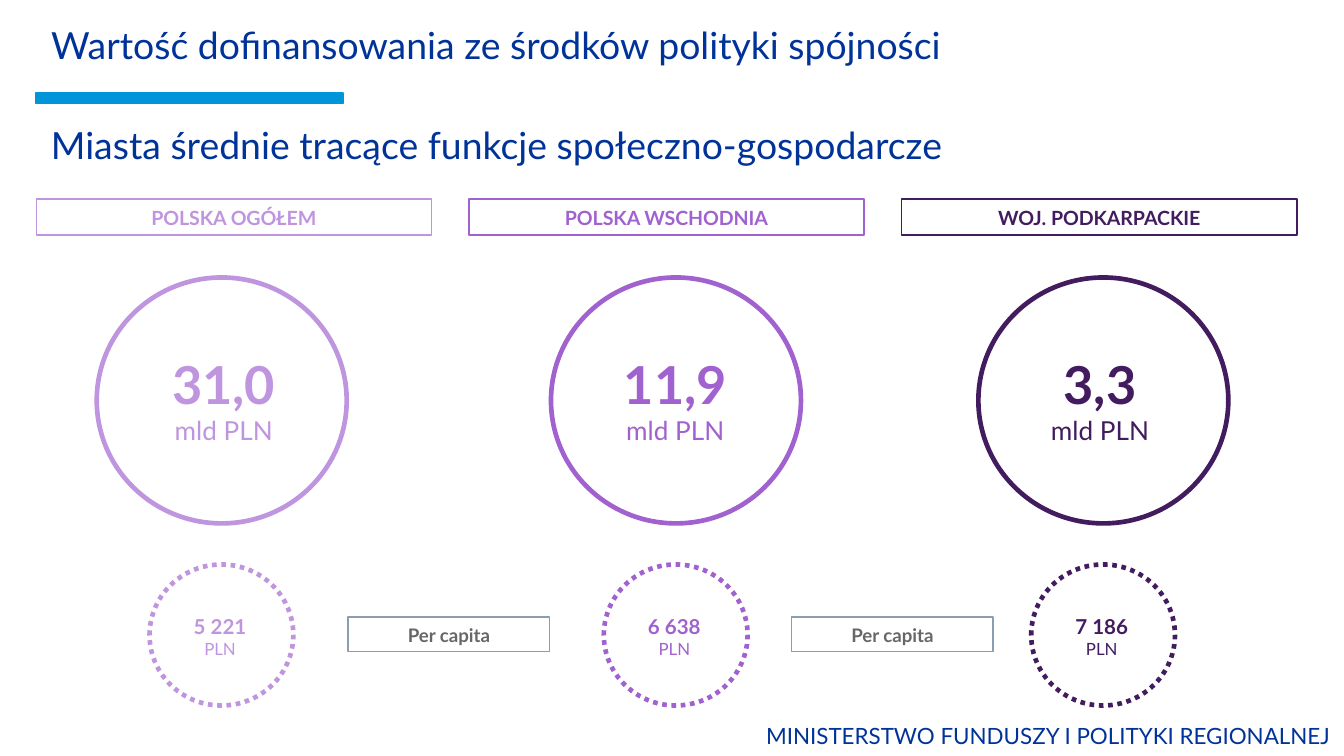
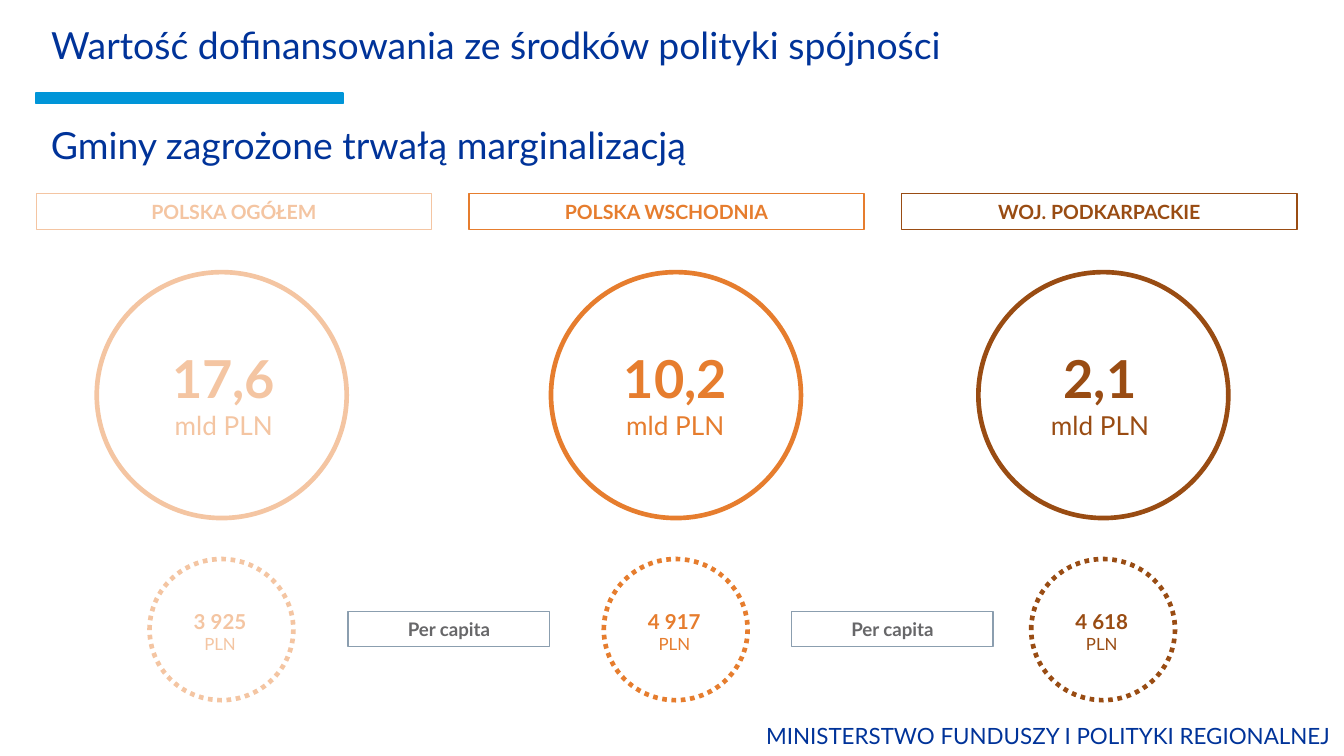
from dataclasses import dataclass

from pptx import Presentation
from pptx.dml.color import RGBColor
from pptx.enum.dml import MSO_LINE_DASH_STYLE as Dash
from pptx.enum.shapes import MSO_SHAPE as Shape
from pptx.enum.text import MSO_ANCHOR as Anchor, MSO_AUTO_SIZE as Fit, PP_ALIGN as Align
from pptx.util import Inches, Pt

CELL = Inches(0.1)
FONT = "Lato"
NAVY, BLUE, SLATE, GRAY = "003399", "0095D8", "8B9EAF", "676769"
TITLE = "Wartość dofinansowania ze środków polityki spójności"
MINISTRY = "MINISTERSTWO FUNDUSZY I POLITYKI REGIONALNEJ"
REGIONS = ["POLSKA OGÓŁEM", "POLSKA WSCHODNIA", "WOJ. PODKARPACKIE"]
COLUMN_STEP = 32.2
CIRCLE_OFFSETS = [4.5, 6.1, 5.7]
AMOUNT_OFFSETS = [2.9, 2.7, 2.5]
PER_CAPITA_LEFTS = [23.2, 56.2]

TOPICS = [
    {
        "subtitle": "Miasta średnie tracące funkcje społeczno-gospodarcze",
        "top": 14.8,
        "colors": ["BF95DF", "A162D0", "421C5E"],
        "amounts": ["31,0", "11,9", "3,3"],
        "per_capita": ["5 221", "6 638", "7 186"],
    },
    {
        "subtitle": "Gminy zagrożone trwałą marginalizacją",
        "top": 14.4,
        "colors": ["F4C5A2", "E67D2E", "994C13"],
        "amounts": ["17,6", "10,2", "2,1"],
        "per_capita": ["3 925", "4 917", "4 618"],
    },
]


@dataclass
class Box:
    """A rectangle measured in grid cells."""

    left: float
    top: float
    width: float
    height: float

    def inside(self, left, top, width, height):
        """Return a box placed relative to this one."""
        return Box(self.left + left, self.top + top, width, height)

    def lengths(self):
        """Return left, top, width and height as slide lengths."""
        return [round(n * CELL) for n in (self.left, self.top, self.width, self.height)]


def color(value):
    """Turn a hex string into a colour."""
    return RGBColor.from_string(value)


def write(shape, *lines, ink=NAVY, align=Align.LEFT, anchor=Anchor.TOP, fit=Fit.SHAPE_TO_FIT_TEXT):
    """Fill a shape with lines given as (text, size, bold)."""
    frame = shape.text_frame
    frame.word_wrap = True
    frame.auto_size = fit
    frame.vertical_anchor = anchor
    for index, (text, size, bold) in enumerate(lines):
        para = frame.paragraphs[0] if index == 0 else frame.add_paragraph()
        para.alignment = align
        span = para.add_run()
        span.text = text
        span.font.name = FONT
        span.font.size = Pt(size)
        span.font.bold = bold
        span.font.color.rgb = color(ink)


def add_outline(parent, kind, box, line, width=0.0, fill=None, dash=None):
    """Add a preset shape with a line and an optional fill."""
    shape = parent.shapes.add_shape(kind, *box.lengths())
    shape.shadow.inherit = False
    if fill:
        shape.fill.solid()
        shape.fill.fore_color.rgb = color(fill)
    else:
        shape.fill.background()
    shape.line.color.rgb = color(line)
    shape.line.width = Pt(width)
    if dash:
        shape.line.dash_style = dash
    return shape


def add_text(parent, box, *lines, **style):
    """Add a text box."""
    shape = parent.shapes.add_textbox(*box.lengths())
    write(shape, *lines, **style)
    return shape


def add_label(page, box, text, size, line, ink):
    """Add a framed bold label."""
    shape = add_outline(page, Shape.RECTANGLE, box, line)
    write(shape, (text, size, True), ink=ink, align=Align.CENTER)


def dress_layout(layout, page):
    """Move the shared band and footer onto the layout."""
    band = add_outline(page, Shape.RECTANGLE, Box(2.7, 6.9, 22.8, 0.8), BLUE, 1, fill=BLUE)
    footer = add_text(page, Box(45.7, 53.1, 54.3, 3.2), (MINISTRY, 12, False),
                      align=Align.RIGHT, anchor=Anchor.MIDDLE, fit=Fit.NONE)
    for shape in (band, footer):
        layout.shapes.element.append(shape.element)


def add_headings(page, subtitle):
    """Fill the title and the subtitle."""
    title = page.shapes.title
    title.left, title.top, title.width, title.height = Box(2.8, -0.2, 96.1, 7.1).lengths()
    style = {"anchor": Anchor.MIDDLE, "fit": Fit.NONE}
    write(title, (TITLE, 20, False), **style)
    add_text(page, Box(2.8, 7.6, 69.3, 6.3), (subtitle, 20, False), **style)


def add_region(page, box, index, topic):
    """Add one region: its label, total and value per capita."""
    ink = topic["colors"][index]
    style = {"ink": ink, "align": Align.CENTER}
    add_label(page, box.inside(0, 0, box.width, 2.7), REGIONS[index], 10.5, ink, ink)
    circle = box.inside(CIRCLE_OFFSETS[index], 5.85, 18.6, 18.3)
    add_outline(page, Shape.OVAL, circle, ink, 2.5)
    add_text(page, circle.inside(AMOUNT_OFFSETS[index], 5.05, 13.1, 8),
             (topic["amounts"][index], 28, True), ("mld PLN", 14, False), **style)
    group = page.shapes.add_group_shape()
    ring = circle.inside(3.93, 21.35, 10.7, 10.5)
    add_outline(group, Shape.OVAL, ring, ink, 2.5, dash=Dash.ROUND_DOT)
    add_text(group, ring.inside(1.95, 3.2, 6.6, 4.3),
             (topic["per_capita"][index], 11, True), ("PLN", 9, False), **style)


def add_topic(page, topic):
    """Place the headings, three regions and the labels between them."""
    add_headings(page, topic["subtitle"])
    area = Box(2.7, topic["top"], 93.8, 37.7)
    for index in range(len(REGIONS)):
        column = area.inside(index * COLUMN_STEP, 0, 29.4, area.height)
        add_region(page, column, index, topic)
    for left in PER_CAPITA_LEFTS:
        add_label(page, area.inside(left, 31.1, 15, 2.6), "Per capita", 10, SLATE, GRAY)


def main():
    """Build and save the deck."""
    deck = Presentation()
    deck.slide_width, deck.slide_height = Inches(10), Inches(5.625)
    layout = deck.slide_layouts[5]
    pages = [deck.slides.add_slide(layout) for _ in TOPICS]
    dress_layout(layout, pages[0])
    for page, topic in zip(pages, TOPICS):
        add_topic(page, topic)
    deck.save("out.pptx")


if __name__ == "__main__":
    main()
